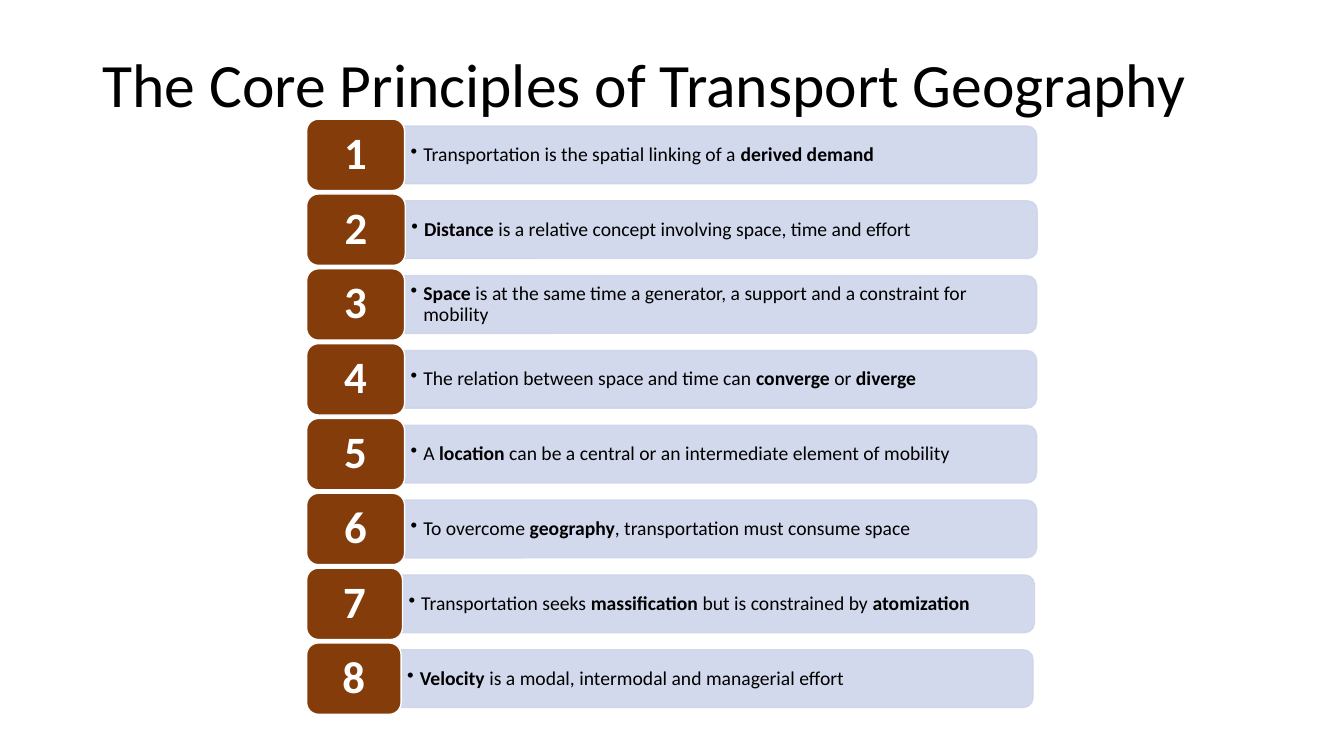
from lxml.etree import SubElement
from pptx import Presentation
from pptx.dml.color import RGBColor
from pptx.enum.shapes import MSO_SHAPE
from pptx.enum.text import MSO_ANCHOR, MSO_AUTO_SIZE, PP_ALIGN
from pptx.oxml.ns import qn
from pptx.util import Pt

COLORS = {"text": "000000", "number": "843C0B", "bar": "CFD5EA", "white": "FFFFFF"}

# Each principle: number box width, then (text, bold) runs
PRINCIPLES = [
    (70, [("Transportation is the spatial linking of a ", False), ("derived demand", True)]),
    (70.5, [("Distance", True),
            (" is a relative concept involving space, time and effort", False)]),
    (70, [("Space", True),
          (" is at the same time a generator, a support and a constraint for mobility", False)]),
    (70, [("The relation between space and time can ", False), ("converge", True),
          (" or ", False), ("diverge", True)]),
    (70, [("A ", False), ("location", True),
          (" can be a central or an intermediate element of mobility", False)]),
    (70, [("To overcome ", False), ("geography", True),
          (", transportation must consume space", False)]),
    (68.5, [("Transportation seeks ", False), ("massification", True),
            (" but is constrained by ", False), ("atomization", True)]),
    (67.5, [("Velocity", True), (" is a modal, intermodal and managerial effort", False)]),
]

LIST_LEFT = 219
FIRST_CENTER = 110.6
ROW_PITCH = 53.45
NUMBER_HEIGHT = 51
BAR_LENGTH, BAR_HEIGHT = 451.4, 41.2
TEXT_WIDTH, TEXT_HEIGHT = 449.4, 37


class PrinciplesSlide:
    """Holds the style and the current slide."""

    def __init__(self, presentation, font="Calibri"):
        self.font = font
        self.slide = presentation.slides.add_slide(presentation.slide_layouts[5])

    def color(self, name):
        return RGBColor.from_string(COLORS[name])

    def add_runs(self, paragraph, runs, size, color):
        paragraph.line_spacing = 0.9
        for text, bold in runs:
            run = paragraph.add_run()
            run.text = text
            run.font.name = self.font
            run.font.size = Pt(size)
            run.font.bold = bold
            run.font.color.rgb = self.color(color)

    def frame(self, shape, horizontal, vertical):
        frame = shape.text_frame
        frame.word_wrap = True
        frame.auto_size = MSO_AUTO_SIZE.NONE
        frame.vertical_anchor = MSO_ANCHOR.MIDDLE
        frame.margin_left = frame.margin_right = Pt(horizontal)
        frame.margin_top = frame.margin_bottom = Pt(vertical)
        return frame

    def title(self, text, left, top, width, height):
        title = self.slide.shapes.title
        title.left, title.top, title.width, title.height = map(Pt, (left, top, width, height))
        paragraph = self.frame(title, 7.2, 3.6).paragraphs[0]
        paragraph.alignment = PP_ALIGN.LEFT
        self.add_runs(paragraph, [(text, False)], 44, "text")

    def box(self, kind, left, top, width, height, fill, line):
        shape = self.slide.shapes.add_shape(kind, *map(Pt, (left, top, width, height)))
        shape.shadow.inherit = False
        shape.fill.solid()
        shape.fill.fore_color.rgb = self.color(fill)
        shape.line.color.rgb = self.color(line)
        shape.line.width = Pt(1)
        return shape

    def bar(self, left, center):
        # A tall shape turned a quarter, so its rounded end points right
        bar = self.box(MSO_SHAPE.ROUND_2_SAME_RECTANGLE,
                       left + (BAR_LENGTH - BAR_HEIGHT) / 2, center - BAR_LENGTH / 2,
                       BAR_HEIGHT, BAR_LENGTH, "bar", "bar")
        bar.rotation = 90
        for color in bar._element.spPr.iter(qn("a:srgbClr")):
            SubElement(color, qn("a:alpha")).set("val", "90000")

    def bullet_text(self, runs, left, center):
        textbox = self.slide.shapes.add_textbox(
            *map(Pt, (left, center - TEXT_HEIGHT / 2, TEXT_WIDTH, TEXT_HEIGHT)))
        paragraph = self.frame(textbox, 4.4, 2.2).paragraphs[0]
        paragraph.level = 1
        properties = paragraph._p.get_or_add_pPr()
        properties.set("marL", str(Pt(9)))
        properties.set("indent", str(-Pt(9)))
        SubElement(properties, qn("a:buChar")).set("char", "•")
        self.add_runs(paragraph, runs, 14, "text")

    def number(self, value, width, center):
        box = self.box(MSO_SHAPE.ROUNDED_RECTANGLE, LIST_LEFT, center - NUMBER_HEIGHT / 2,
                       width, NUMBER_HEIGHT, "number", "white")
        paragraph = self.frame(box, 9, 5).paragraphs[0]
        paragraph.alignment = PP_ALIGN.CENTER
        self.add_runs(paragraph, [(str(value), True)], 32, "white")


def main():
    presentation = Presentation()
    presentation.slide_width, presentation.slide_height = Pt(960), Pt(540)
    page = PrinciplesSlide(presentation)

    # Title
    page.title("The Core Principles of Transport Geography", 66, 10, 828, 104.4)

    # Numbered principles
    for index, (number_width, runs) in enumerate(PRINCIPLES):
        center = FIRST_CENTER + index * ROW_PITCH
        bar_left = LIST_LEFT + number_width
        page.bar(bar_left, center)
        page.bullet_text(runs, bar_left, center)
        page.number(index + 1, number_width, center)

    presentation.save("out.pptx")


if __name__ == "__main__":
    main()
